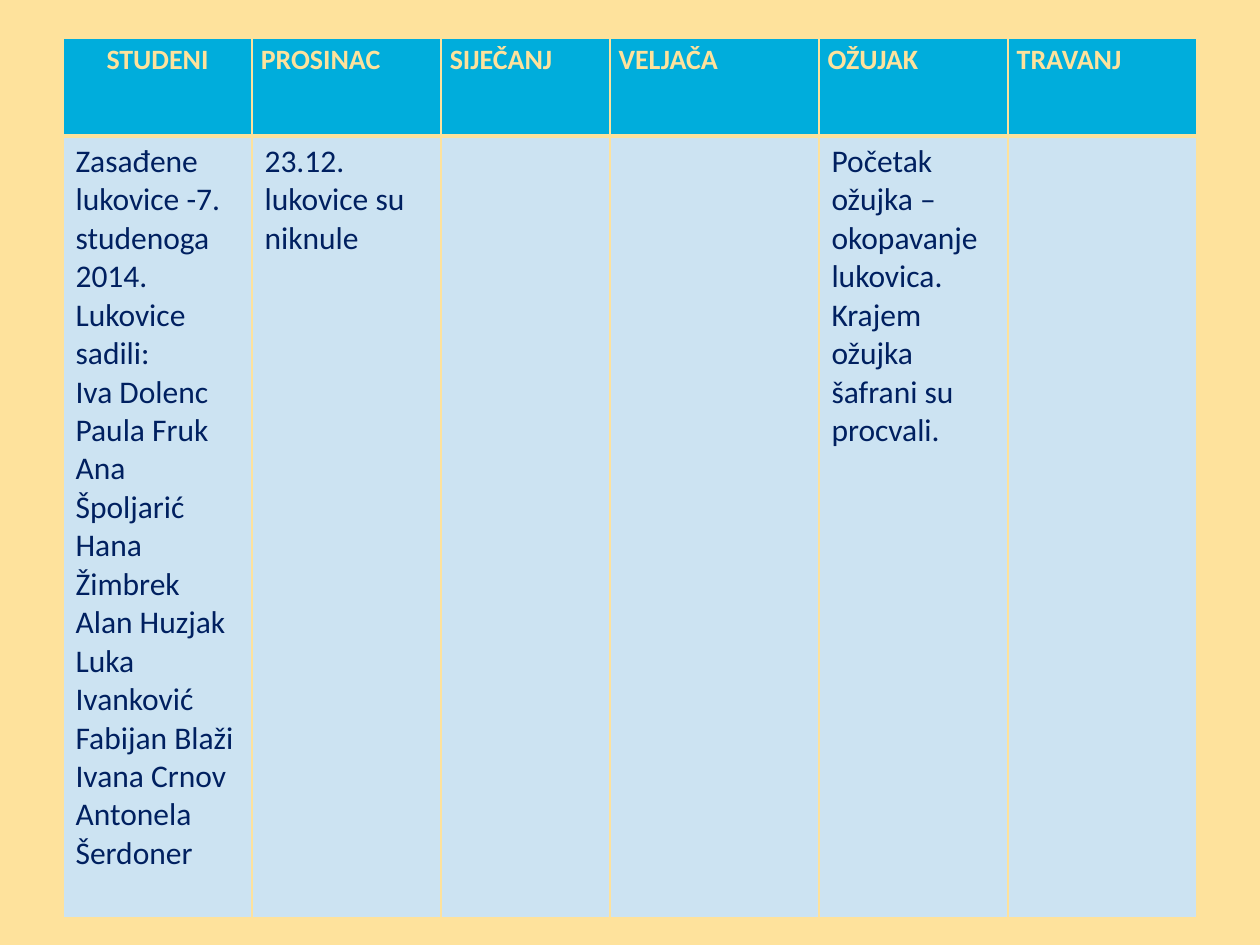
from lxml import etree
from pptx import Presentation
from pptx import util as u
from pptx.dml.color import RGBColor
from pptx.enum import text
from pptx.oxml.ns import qn

SAND, BLUE, PALE, NAVY = "FEE29C", "00ADDC", "CCE3F2", "002060"
COLUMN_WIDTHS = [1.5, 1.5, 1.34, 1.66, 1.5, 1.5]
ROW_HEIGHTS = [0.78, 6.2]
MONTHS = ["STUDENI", "PROSINAC", "SIJEČANJ", "VELJAČA", "OŽUJAK", "TRAVANJ"]
NOTES = {
    "STUDENI": [
        "Zasađene lukovice -7. studenoga", "2014.", "Lukovice sadili:",
        "Iva Dolenc", "Paula Fruk", "Ana Špoljarić", "Hana Žimbrek",
        "Alan Huzjak", "Luka Ivanković", "Fabijan Blaži", "Ivana Crnov",
        "Antonela Šerdoner",
    ],
    "PROSINAC": ["23.12. lukovice su niknule"],
    "OŽUJAK": [
        "Početak ožujka – okopavanje lukovica.",
        "Krajem ožujka šafrani su procvali.",
    ],
}


def color(value):
    return RGBColor.from_string(value)


def write(para, words, size=18, ink=NAVY, bold=False, align=text.PP_ALIGN.LEFT, spacing=1.0):
    para.alignment = align
    para.line_spacing = spacing
    span = para.add_run()
    span.text = words
    span.font.name = "Calibri"
    span.font.size = u.Pt(size)
    span.font.bold = bold
    span.font.color.rgb = color(ink)


class Page:
    def __init__(self, deck, background):
        self.slide = deck.slides.add_slide(deck.slide_layouts[6])
        fill = self.slide.background.fill
        fill.solid()
        fill.fore_color.rgb = color(background)

    def table(self, left, top, widths, heights):
        frame = self.slide.shapes.add_table(
            len(heights), len(widths), u.Inches(left), u.Inches(top),
            u.Inches(sum(widths)), u.Inches(sum(heights)))
        for column, width in zip(frame.table.columns, widths):
            column.width = u.Inches(width)
        for row, height in zip(frame.table.rows, heights):
            row.height = u.Inches(height)
        return frame.table

    def borders(self, cell, bottom):
        properties = cell._tc.get_or_add_tcPr()
        for side, width in (("L", 1), ("R", 1), ("T", 1), ("B", bottom)):
            line = etree.SubElement(properties, qn(f"a:ln{side}"), w=str(u.Pt(width)))
            solid = etree.SubElement(line, qn("a:solidFill"))
            etree.SubElement(solid, qn("a:srgbClr"), val=SAND)

    def cell(self, cell, lines, fill, bottom=1, margins=(0.1, 0.05), **style):
        self.borders(cell, bottom)
        cell.fill.solid()
        cell.fill.fore_color.rgb = color(fill)
        side, edge = map(u.Inches, margins)
        cell.margin_left = cell.margin_right = side
        cell.margin_top = cell.margin_bottom = edge
        frame = cell.text_frame
        for index, words in enumerate(lines):
            para = frame.add_paragraph() if index else frame.paragraphs[0]
            write(para, words, **style)


def main():
    deck = Presentation()
    deck.slide_width, deck.slide_height = u.Inches(10), u.Inches(7.5)
    page = Page(deck, SAND)
    calendar = page.table(0.5, 0.3, COLUMN_WIDTHS, ROW_HEIGHTS)
    for column, month in enumerate(MONTHS):
        align = text.PP_ALIGN.LEFT if column else text.PP_ALIGN.CENTER
        page.cell(calendar.cell(0, column), [month], BLUE, bottom=3, margins=(0.07, 0),
                  size=16, ink=SAND, bold=True, align=align, spacing=1.15)
        page.cell(calendar.cell(1, column), NOTES.get(month, []), PALE)
    deck.save("out.pptx")


if __name__ == "__main__":
    main()
